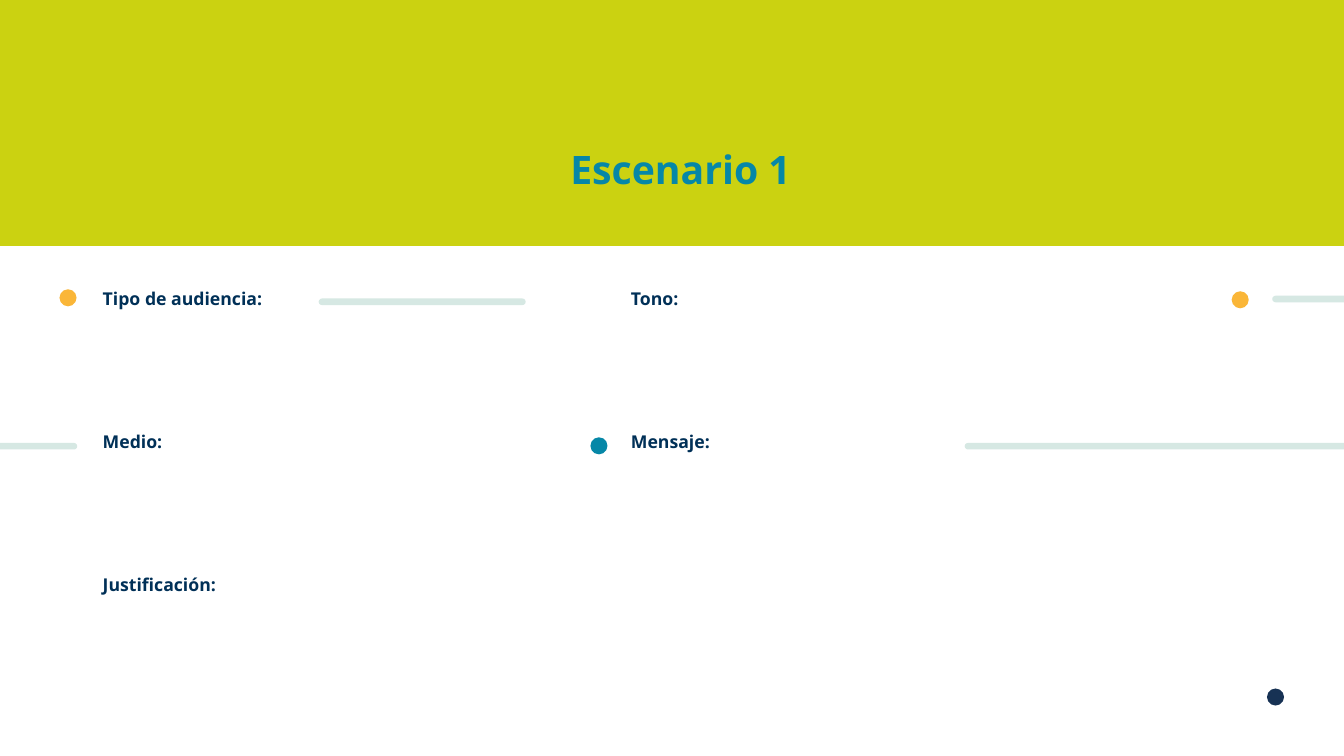
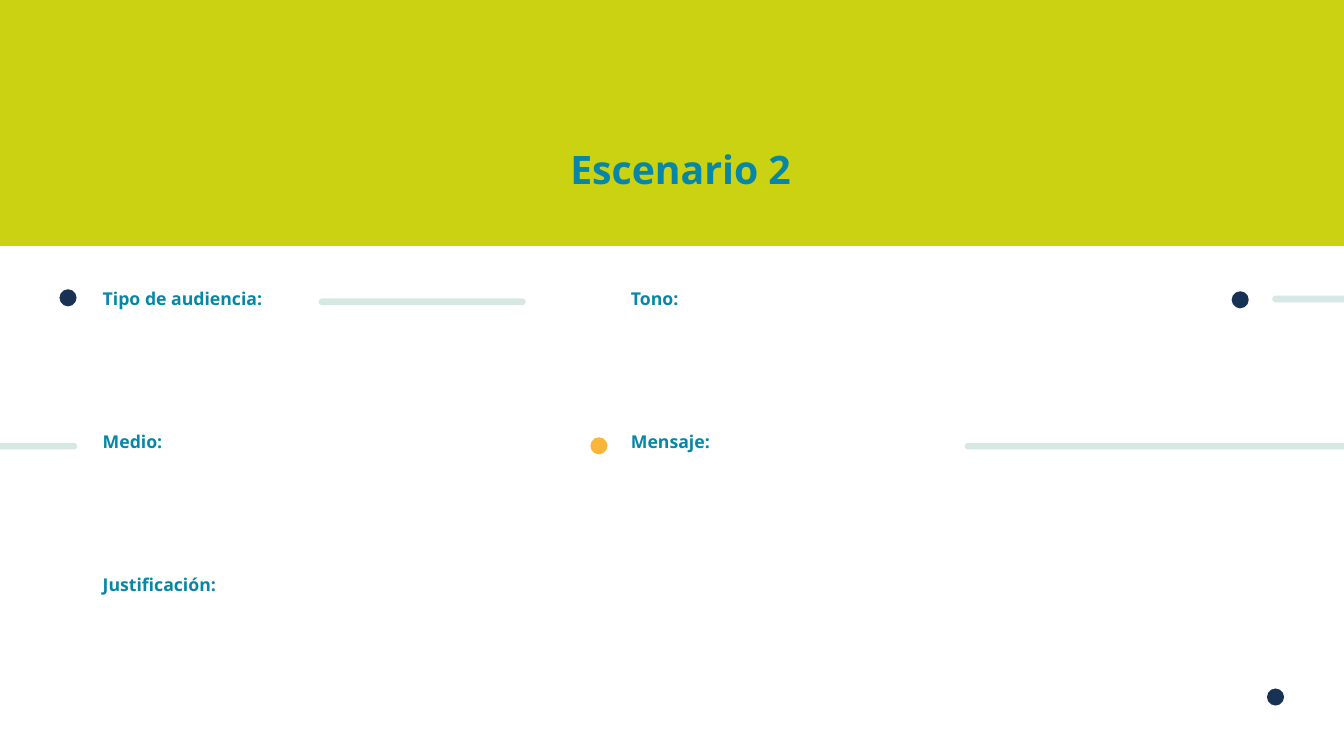
from pptx import Presentation
from pptx.dml.color import RGBColor
from pptx.enum.shapes import MSO_SHAPE
from pptx.enum.text import MSO_ANCHOR, MSO_AUTO_SIZE, PP_ALIGN
from pptx.util import Cm, Pt

COLORS = {
    "lime": "CBD211",
    "teal": "0687A7",
    "ink": "003057",
    "navy": "173254",
    "amber": "FAB638",
    "mint": "D6E8E3",
}
SLIDE_WIDTH, SLIDE_HEIGHT = 33.87, 19.05
BAND_HEIGHT = 6.2
FONT = {"name": "Open Sans", "bold": True}
TITLE_FONT = {**FONT, "size": Pt(28)}
LABEL_FONT = {**FONT, "size": Pt(12.6)}
TITLE_FRAME = {
    "vertical_anchor": MSO_ANCHOR.BOTTOM,
    "margin_bottom": 0,
    "word_wrap": True,
    "auto_size": MSO_AUTO_SIZE.NONE,
}

# Label grid: columns are (left, width), rows are evenly spaced
COLUMNS = [(2.34, 10.92), (15.65, 16.28)]
FIRST_ROW, ROW_STEP, LABEL_HEIGHT = 7.28, 3.6, 0.69
LABELS = [
    ("Tipo de audiencia:", 0, 0),
    ("Medio:", 0, 1),
    ("Tono:", 1, 0),
    ("Mensaje:", 1, 1),
    ("Justificación:", 0, 2),
]

# Ornaments: bars are (left, top, width), dots are (left, top)
BAR_HEIGHT, DOT_SIZE = 0.13, 0.43
BARS = [(8.05, 7.54, 5.18), (-0.08, 11.18, 2.01),
        (24.33, 11.18, 9.73), (32.08, 7.47, 2.01)]
DOTS = [(1.5, 7.29), (14.88, 11.02), (31.04, 7.34), (31.93, 17.35)]

# Title, label colour, dot colours
SCENARIOS = [
    ("Escenario 1", "ink", ["amber", "teal", "amber", "navy"]),
    ("Escenario 2", "teal", ["navy", "amber", "navy", "navy"]),
]


def rgb(color):
    return RGBColor.from_string(COLORS[color])


def set_values(target, values):
    for name, value in values.items():
        setattr(target, name, value)


def write(paragraph, text, font, color):
    span = paragraph.add_run()
    span.text = text
    set_values(span.font, font)
    span.font.color.rgb = rgb(color)


def add_plain_shape(page, kind, bounds, color):
    shape = page.shapes.add_shape(kind, *map(Cm, bounds))
    shape.shadow.inherit = False
    shape.fill.solid()
    shape.fill.fore_color.rgb = rgb(color)
    shape.line.fill.background()
    return shape


def add_band(page):
    """Place the band behind the title."""
    band = add_plain_shape(page, MSO_SHAPE.RECTANGLE,
                           (0, 0, SLIDE_WIDTH, BAND_HEIGHT), "lime")
    page.shapes.title.element.addprevious(band.element)


def format_title(page, text):
    title = page.shapes.title
    set_values(title, {"left": Cm(2.34), "top": Cm(2.69),
                       "width": Cm(29.62), "height": Cm(2.16)})
    set_values(title.text_frame, TITLE_FRAME)
    paragraph = title.text_frame.paragraphs[0]
    paragraph.alignment = PP_ALIGN.CENTER
    write(paragraph, text, TITLE_FONT, "teal")


def add_label(page, text, column, row, color):
    left, width = COLUMNS[column]
    top = FIRST_ROW + row * ROW_STEP
    box = page.shapes.add_textbox(*map(Cm, (left, top, width, LABEL_HEIGHT)))
    box.text_frame.word_wrap = True
    paragraph = box.text_frame.paragraphs[0]
    paragraph.line_spacing = 0.7
    write(paragraph, text, LABEL_FONT, color)


def add_bar(page, left, top, width):
    bar = add_plain_shape(page, MSO_SHAPE.ROUNDED_RECTANGLE,
                          (left, top, width, BAR_HEIGHT), "mint")
    bar.adjustments[0] = 0.5
    bar.line.color.rgb = rgb("mint")
    bar.line.width = Pt(1)


def add_dot(page, left, top, color):
    add_plain_shape(page, MSO_SHAPE.OVAL, (left, top, DOT_SIZE, DOT_SIZE), color)


def add_scenario(deck, title, label_color, dot_colors):
    page = deck.slides.add_slide(deck.slide_layouts.get_by_name("Title Only"))
    add_band(page)
    format_title(page, title)
    for text, column, row in LABELS:
        add_label(page, text, column, row, label_color)
    for bar in BARS:
        add_bar(page, *bar)
    for (left, top), color in zip(DOTS, dot_colors):
        add_dot(page, left, top, color)


def main():
    deck = Presentation()
    deck.slide_width, deck.slide_height = Cm(SLIDE_WIDTH), Cm(SLIDE_HEIGHT)
    for scenario in SCENARIOS:
        add_scenario(deck, *scenario)
    deck.save("out.pptx")


if __name__ == "__main__":
    main()
